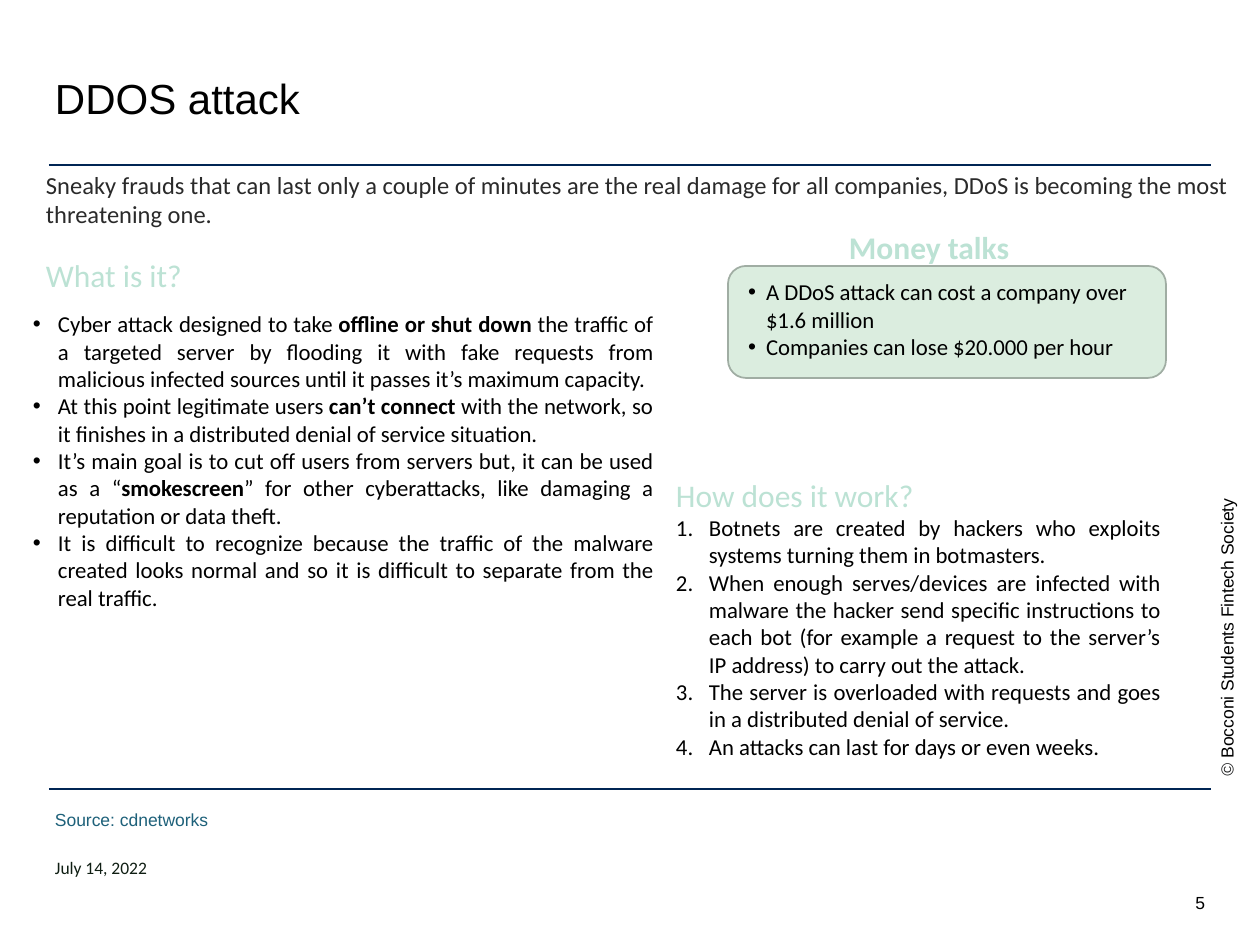
import pptx
import pptx.util
import pptx.dml.color
import pptx.enum.shapes
import pptx.enum.text
import pptx.oxml.ns
from lxml import etree

RGB = pptx.dml.color.RGBColor
ALIGN = pptx.enum.text.PP_ALIGN
ANCHOR = pptx.enum.text.MSO_ANCHOR
SHAPE = pptx.enum.shapes.MSO_SHAPE
LINK = pptx.enum.shapes.MSO_CONNECTOR
QN = pptx.oxml.ns.qn

BLACK = RGB(0x00, 0x00, 0x00)
WHITE = RGB(0xFF, 0xFF, 0xFF)
NAVY = RGB(0x00, 0x25, 0x54)
MINT = RGB(0xBC, 0xE2, 0xD4)
PALE = RGB(0xDB, 0xED, 0xDF)
EDGE = RGB(0xA0, 0xAD, 0xA3)
TEAL = RGB(0x1E, 0x61, 0x7A)
GREY = RGB(0x2A, 0x2A, 0x2A)
INK = RGB(0x20, 0x21, 0x22)
DARK = RGB(0x0F, 0x1E, 0x13)

SCALE = 914400 / 126
PAD = 6

WHAT = [
    [("Cyber attack designed to take ", False), ("offline or shut down ", True),
     ("the traffic of a targeted server by flooding it with fake requests from "
      "malicious infected sources until it passes it’s maximum capacity. ", False)],
    [("At this point legitimate users ", False), ("can’t connect ", True),
     ("with the network, so it finishes in a distributed denial of service "
      "situation.", False)],
    [("It’s main goal is to cut off users from servers but, it can be used as a “",
      False), ("smokescreen", True),
     ("” for other cyberattacks, like damaging a reputation or data theft.", False)],
    [("It is difficult to recognize because the traffic of the malware created "
      "looks normal and so it is difficult to separate from the real traffic.",
      False)],
]
COSTS = ["A DDoS attack can cost a company over $1.6 million",
         "Companies can lose $20.000 per hour"]
STEPS = [
    "Botnets are created by hackers who exploits systems turning them in botmasters.",
    "When enough serves/devices are infected with malware the hacker send specific "
    "instructions to each bot (for example a request to the server’s IP address) "
    "to carry out the attack.",
    "The server is overloaded with requests and goes in a distributed denial of service.",
    "An attacks can last for days or even weeks.",
]


def px(num):
    return pptx.util.Emu(round(num * SCALE))


def setup(frame, wrap=True, anchor=ANCHOR.TOP):
    frame.word_wrap = wrap
    frame.vertical_anchor = anchor
    frame.margin_left = frame.margin_right = px(PAD)
    frame.margin_top = frame.margin_bottom = px(PAD)
    return frame


def add_box(slide, x, y, w, h, wrap=True, anchor=ANCHOR.TOP):
    box = slide.shapes.add_textbox(px(x), px(y), px(w), px(h))
    setup(box.text_frame, wrap, anchor)
    return box


def add_run(para, text, size, color, font="Calibri", bold=False, italic=False):
    run = para.add_run()
    run.text = text
    run.font.size = pptx.util.Pt(size)
    run.font.name = font
    run.font.color.rgb = color
    run.font.bold = bold
    run.font.italic = italic


def add_label(slide, area, text, size, color, font="Calibri", bold=False,
              wrap=True, anchor=ANCHOR.TOP, align=ALIGN.LEFT, lead=None):
    """Place a text box that holds one paragraph in one style."""
    para = add_box(slide, *area, wrap, anchor).text_frame.paragraphs[0]
    para.alignment = align
    if lead:
        para.line_spacing = lead
    add_run(para, text, size, color, font, bold)


def add_list(frame, items, hang, align, number=False, fresh=True):
    """Fill a frame with list items, each a list of (text, bold) runs."""
    for item in items:
        para = frame.paragraphs[0] if fresh else frame.add_paragraph()
        fresh = False
        para.alignment = align
        props = para._p.get_or_add_pPr()
        props.set("marL", str(px(hang)))
        props.set("indent", str(-px(hang)))
        font = etree.SubElement(props, QN("a:buFont"))
        font.set("typeface", "Calibri" if number else "Arial")
        if number:
            etree.SubElement(props, QN("a:buAutoNum")).set("type", "arabicPeriod")
        else:
            etree.SubElement(props, QN("a:buChar")).set("char", "•")
        for text, bold in item:
            add_run(para, text, 13, BLACK, bold=bold)


def add_rule(slide, x, y, w):
    rule = slide.shapes.add_connector(LINK.STRAIGHT, px(x), px(y), px(x + w), px(y))
    rule.line.color.rgb = NAVY
    rule.line.width = pptx.util.Pt(1)
    etree.SubElement(rule._element.spPr, QN("a:effectLst"))


def add_plate(slide, kind, x, y, w, h, fill):
    plate = slide.shapes.add_shape(kind, px(x), px(y), px(w), px(h))
    plate.shadow.inherit = False
    plate.fill.solid()
    plate.fill.fore_color.rgb = fill
    plate.line.fill.background()
    return plate


def draw_frame(slide, x, y, w, h):
    """Draw the two rules and the upright copyright line."""
    for level in (y + h, y):
        add_rule(slide, x, level, w)
    side = add_box(slide, x + w - 131, y + h - 169, 292, 32, wrap=False)
    side.rotation = 270
    para = side.text_frame.paragraphs[0]
    add_run(para, "© ", 10, INK, "Arial", italic=True)
    add_run(para, "Bocconi Students Fintech Society", 10, BLACK, "Arial")


def draw_head(slide, x, y, w, h):
    add_label(slide, (x, y, w, h), "DDOS attack", 24, BLACK, "Arial",
              anchor=ANCHOR.MIDDLE, lead=0.9)
    add_label(slide, (x - 9, y + 114, w + 44, 72),
              "Sneaky frauds that can last only a couple of minutes are the real damage "
              "for all companies, DDoS is becoming the most threatening one.", 14, GREY)


def draw_what(slide, x, y, w, h):
    add_label(slide, (x + 13, y, 150, 50), "What is it?", 18, MINT, wrap=False)
    plate = add_plate(slide, SHAPE.RECTANGLE, x, y + 54, w, h - 54, WHITE)
    add_list(setup(plate.text_frame), WHAT, 25, ALIGN.JUSTIFY)


def draw_money(slide, x, y, w, h):
    add_label(slide, (x + 115, y, 175, 50), "Money talks", 18, MINT,
              bold=True, wrap=False)
    plate = add_plate(slide, SHAPE.ROUNDED_RECTANGLE, x, y + 44, w, h - 44, PALE)
    plate.adjustments[0] = 0.16
    plate.line.color.rgb = EDGE
    plate.line.width = pptx.util.Pt(1)
    box = add_box(slide, x + 14, y + 50, w - 28, h - 56)
    add_list(box.text_frame, [[(text, False)] for text in COSTS], 18, ALIGN.LEFT)


def draw_how(slide, x, y, w, h):
    frame = add_box(slide, x, y, w, h).text_frame
    para = frame.paragraphs[0]
    para.alignment = ALIGN.JUSTIFY
    add_run(para, "How does it work?", 18, MINT)
    add_list(frame, [[(text, False)] for text in STEPS], 33, ALIGN.JUSTIFY,
             number=True, fresh=False)


def draw_foot(slide, x, y, w, h):
    add_label(slide, (x, y, w, 59), "Source: cdnetworks", 10, TEAL, "Arial", lead=0.9)
    add_label(slide, (x, y + 46, 378, 34), "July 14, 2022", 10, DARK)
    add_label(slide, (x + w - 24, y + h - 32, 24, 32), "5", 10, BLACK, "Arial",
              wrap=False, anchor=ANCHOR.MIDDLE, align=ALIGN.RIGHT)


def main():
    deck = pptx.Presentation()
    deck.slide_width = px(1260)
    deck.slide_height = px(945)
    slide = deck.slides.add_slide(deck.slide_layouts[6])
    draw_frame(slide, 49, 165, 1162, 624)
    draw_head(slide, 49, 50, 1162, 102)
    draw_what(slide, 27, 250, 632, 398)
    draw_money(slide, 728, 222, 438, 156)
    draw_how(slide, 670, 470, 496, 299)
    draw_foot(slide, 49, 805, 1162, 113)
    deck.save("out.pptx")


if __name__ == "__main__":
    main()
